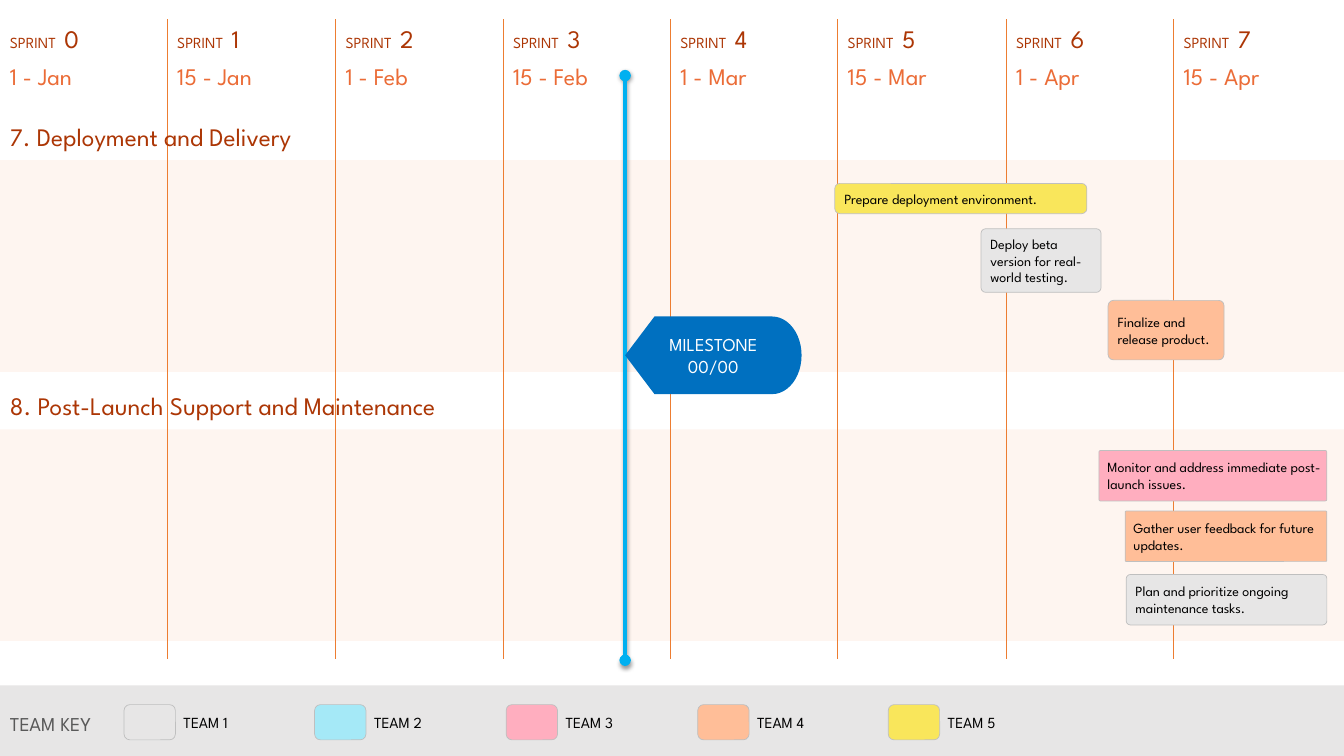
"""Builds a sprint timeline slide with tasks, a milestone and a team key."""
from dataclasses import dataclass

from lxml import etree
from pptx import Presentation
from pptx.dml.color import RGBColor
from pptx.enum.shapes import MSO_CONNECTOR, MSO_SHAPE
from pptx.enum.text import MSO_ANCHOR, MSO_AUTO_SIZE, PP_ALIGN
from pptx.oxml import parse_xml
from pptx.oxml.ns import nsdecls, qn
from pptx.util import Pt

RECT = MSO_SHAPE.RECTANGLE
ROUND = MSO_SHAPE.ROUNDED_RECTANGLE
FLAG = MSO_SHAPE.FLOWCHART_DISPLAY
STRAIGHT = MSO_CONNECTOR.STRAIGHT
TOP, MIDDLE = MSO_ANCHOR.TOP, MSO_ANCHOR.MIDDLE
LEFT, CENTER = PP_ALIGN.LEFT, PP_ALIGN.CENTER
GROW, FIXED = MSO_AUTO_SIZE.SHAPE_TO_FIT_TEXT, MSO_AUTO_SIZE.NONE

EMU_PER_PX = 9144
WIDTH, HEIGHT = 1333, 750
SPRINT_SPAN = 1164 / 7
KEY_SPAN = 189.5


@dataclass(frozen=True)
class Theme:
    """Holds the font, colours and type sizes."""
    font: str = "League Spartan"
    band: str = "FEF5F0"
    grid: str = "ED7D31"
    title: str = "AC3605"
    date: str = "EB6C37"
    text: str = "000000"
    muted: str = "595959"
    light: str = "FFFFFF"
    outline: str = "BFBFBF"
    marker: str = "00B0F0"
    milestone: str = "0070C0"
    key_bar: str = "E7E6E6"
    teams: tuple = ("E7E6E6", "A5E9F7", "FFAEBF", "FFBE98", "F9E65B")
    title_size: int = 18
    gap_size: int = 24
    date_size: int = 17
    key_size: int = 14
    milestone_size: int = 13
    label_size: int = 11
    task_size: int = 10


T = Theme()
DATES = ["1 - Jan", "15 - Jan", "1 - Feb", "15 - Feb",
         "1 - Mar", "15 - Mar", "1 - Apr", "15 - Apr"]
PHASES = [("7. Deployment and Delivery", 115, 159),
          ("8. Post-Launch Support and Maintenance", 382, 426)]
TASKS = [
    ("Prepare deployment environment.", 5, (828, 182, 250, 30), 0.17),
    ("Deploy beta version for real-world testing.", 1, (973, 227, 119, 63), 0.07),
    ("Finalize and release product.", 4, (1099, 298, 115, 59), 0.09),
    ("Monitor and address immediate post-launch issues.", 3, (1090, 447, 226, 50), 0.03),
    ("Gather user feedback for future updates.", 4, (1116, 507, 200, 50), 0.02),
    ("Plan and prioritize ongoing maintenance tasks.", 1, (1117, 570, 199, 50), 0.08),
]


def px(*values):
    """Turn px lengths into EMU."""
    return [round(v * EMU_PER_PX) for v in values]


def rgb(color):
    """Turn a hex string into a colour."""
    return RGBColor.from_string(color)


def write(sp, text, *, size, color, align=LEFT, anchor=TOP,
          insets=(10, 5, 10, 5), wrap=True, fit=FIXED):
    """Fill a shape with text, given as a string or as (text, size) runs."""
    tf = sp.text_frame
    tf.auto_size, tf.word_wrap, tf.vertical_anchor = fit, wrap, anchor
    (tf.margin_left, tf.margin_top,
     tf.margin_right, tf.margin_bottom) = px(*insets)
    lines = [[(t, size)] for t in text.split("\n")] if isinstance(text, str) else [text]
    for i, runs in enumerate(lines):
        p = tf.add_paragraph() if i else tf.paragraphs[0]
        p.alignment = align
        for content, run_size in runs:
            r = p.add_run()
            r.text = content
            r.font.name, r.font.size = T.font, Pt(run_size)
            r.font.color.rgb = rgb(color)


def add_text(s, box, text, **fmt):
    """Add a text box."""
    write(s.shapes.add_textbox(*px(*box)), text, **fmt)


def add_box(s, kind, box, fill, outline=None, corner=None):
    """Add a filled preset shape."""
    sp = s.shapes.add_shape(kind, *px(*box))
    sp.shadow.inherit = False
    sp.fill.solid()
    sp.fill.fore_color.rgb = rgb(fill)
    if outline:
        sp.line.color.rgb = rgb(outline)
        sp.line.width = Pt(0.5)
    else:
        sp.line.fill.background()
    if corner is not None:
        sp.adjustments[0] = corner
    return sp


def add_vertical(s, x, top, bottom, color, width):
    """Add a vertical line and return it with its empty effect list."""
    line = s.shapes.add_connector(STRAIGHT, *px(x, top, x, bottom))
    line.line.color.rgb = rgb(color)
    line.line.width = Pt(width)
    effects = etree.SubElement(line._element.spPr, qn("a:effectLst"))
    return line, effects


def add_sprint(s, number, date):
    """Add the heading and date of one sprint."""
    x = round(number * SPRINT_SPAN)
    add_text(s, (x, 10, 167, 50),
             [("SPRINT", T.label_size), (" ", T.gap_size), (str(number), T.title_size)],
             size=T.label_size, color=T.title, fit=GROW)
    add_text(s, (x, 61, 167, 29), date, size=T.date_size, color=T.date,
             anchor=MIDDLE, insets=(10, 0, 0, 0), fit=GROW)


def add_task(s, text, team, box, corner):
    """Add a task card in its team's colour."""
    sp = add_box(s, ROUND, box, T.teams[team - 1], T.outline, corner)
    write(sp, text, size=T.task_size, color=T.text, anchor=MIDDLE, insets=(8, 5, 5, 5))


def add_team_key(s):
    """Add the bar that explains the team colours."""
    add_box(s, RECT, (0, 680, WIDTH, 70), T.key_bar)
    add_text(s, (0, 701, 111, 34), "TEAM KEY", size=T.key_size, color=T.muted, wrap=False)
    for i, fill in enumerate(T.teams):
        x = round(123 + i * KEY_SPAN)
        add_box(s, ROUND, (x, 699, 51, 35), fill, T.outline)
        add_text(s, (x + 59, 702, 120, 29), f"TEAM {i + 1}", size=T.label_size,
                 color=T.text, anchor=MIDDLE, insets=(0, 0, 0, 0), wrap=False)


def add_milestone(s, x):
    """Add the milestone marker line and its flag."""
    line, effects = add_vertical(s, x, 75, 655, T.marker, 2.75)
    ln = line.line._get_or_add_ln()
    for end in ("a:headEnd", "a:tailEnd"):
        etree.SubElement(ln, qn(end), type="oval")
    effects.append(parse_xml(
        f'<a:outerShdw {nsdecls("a")} blurRad="{Pt(3.1)}" dist="{Pt(1.6)}" dir="5400000">'
        '<a:srgbClr val="000000"><a:alpha val="38000"/></a:srgbClr></a:outerShdw>'))
    flag = add_box(s, FLAG, (x, 314, 175, 77), T.milestone)
    write(flag, "MILESTONE\n00/00", size=T.milestone_size, color=T.light,
          align=CENTER, anchor=MIDDLE, insets=(0, 0, 0, 0))


def main():
    """Build and save the slide."""
    prs = Presentation()
    prs.slide_width, prs.slide_height = px(WIDTH, HEIGHT)
    s = prs.slides.add_slide(prs.slide_layouts[6])
    for _, _, band_top in PHASES:
        add_box(s, RECT, (0, band_top, WIDTH, 210), T.band)
    for i in range(1, len(DATES)):
        add_vertical(s, round(i * SPRINT_SPAN), 19, 654, T.grid, 0.5)
    for i, date in enumerate(DATES):
        add_sprint(s, i, date)
    add_team_key(s)
    for title, top, _ in PHASES:
        add_text(s, (0, top, 800, 40), title, size=T.title_size, color=T.title, fit=GROW)
    add_milestone(s, 620)
    for task in TASKS:
        add_task(s, *task)
    prs.save("out.pptx")


if __name__ == "__main__":
    main()
